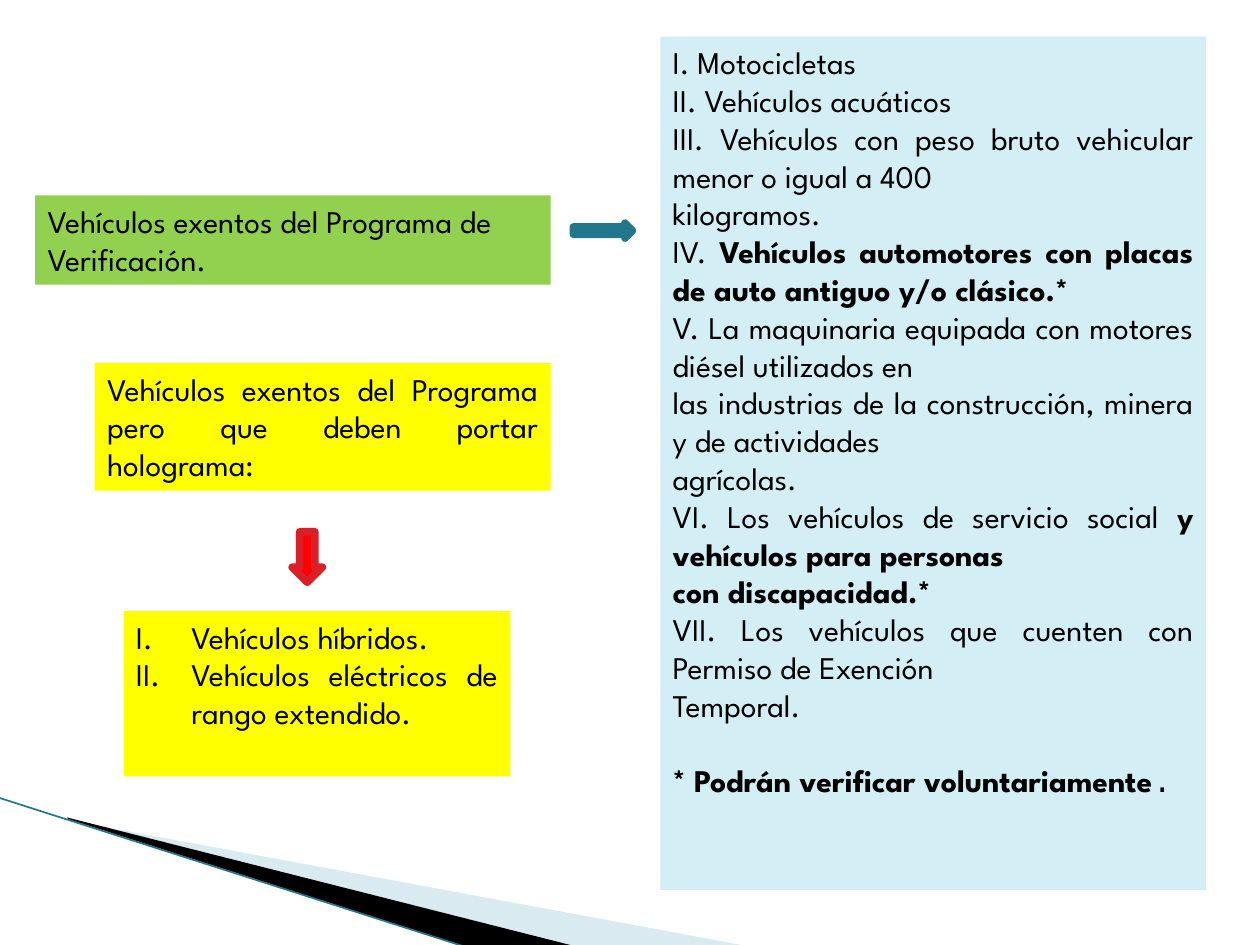
"""Build the slide on vehicles exempt from the verification programme."""
import dataclasses
import typing

import lxml.etree
import pptx
import pptx.dml.color
import pptx.enum.shapes
import pptx.enum.text
import pptx.oxml.ns
import pptx.util

Cm = pptx.util.Cm
Pt = pptx.util.Pt
Align = pptx.enum.text.PP_ALIGN
Geometry = pptx.enum.shapes.MSO_SHAPE

COLORS = {
    "text": "000000", "green": "92D050", "yellow": "FFFF00", "ice": "D3EEF5",
    "red": "FF0000", "crimson": "DA1F28", "aqua": "2DA2BF", "teal": "21788D",
    "black": "000000", "mist": "A0CBDC",
}
FONT = {"name": "League Spartan", "size": Pt(18), "bold": False}
FRAME = {
    "word_wrap": True,
    "auto_size": pptx.enum.text.MSO_AUTO_SIZE.NONE,
    "vertical_anchor": pptx.enum.text.MSO_ANCHOR.TOP,
    "margin_left": Cm(0.25), "margin_right": Cm(0.25),
    "margin_top": Cm(0.13), "margin_bottom": Cm(0.13),
}
BOLD = {"bold": True}
HANGING = Cm(1.12)


@dataclasses.dataclass
class Run:
    """A stretch of text with its font changes."""
    text: str
    font: dict = dataclasses.field(default_factory=dict)


@dataclasses.dataclass
class Panel:
    """A filled text panel, measured in centimetres."""
    box: tuple[float, float, float, float]
    fill: str
    paragraphs: list[list[Run]]
    align: typing.Any = Align.JUSTIFY
    numbered: bool = False
    last_gap: float = 0


@dataclasses.dataclass
class Arrow:
    """A block arrow, measured in centimetres."""
    geometry: typing.Any
    box: tuple[float, float, float, float]
    fill: str
    line: str


@dataclasses.dataclass
class Wedge:
    """A decorative polygon, measured in centimetres."""
    points: list[tuple[float, float]]
    fill: str
    opacity: int = 100


PROGRAM = Panel((0.71, 3.94, 10.39, 1.8), "green",
                [[Run("Vehículos exentos del Programa de Verificación.")]], Align.LEFT)
EXEMPT = Panel((13.31, 0.74, 11, 17.2), "ice", [
    [Run("I. Motocicletas")],
    [Run("II. Vehículos acuáticos")],
    [Run("III. Vehículos con peso bruto vehicular menor o igual a 400")],
    [Run("kilogramos.")],
    [Run("IV. "), Run("Vehículos automotores con placas de auto antiguo y/o clásico.*", BOLD)],
    [Run("V. La maquinaria equipada con motores diésel utilizados en")],
    [Run("las industrias de la construcción, minera y de actividades")],
    [Run("agrícolas.")],
    [Run("VI. Los vehículos de servicio social "), Run("y vehículos para personas", BOLD)],
    [Run("con discapacidad.*", BOLD)],
    [Run("VII. Los vehículos que cuenten con Permiso de Exención")],
    [Run("Temporal.")],
    [Run("* Podrán verificar voluntariamente", BOLD), Run(".", {"name": "Courier New"})],
], last_gap=21.6)
HOLOGRAM = Panel((1.91, 7.32, 9.19, 2.57), "yellow", [
    [Run("Vehículos exentos del Programa pero que deben portar holograma:")]])
HYBRIDS = Panel((2.49, 12.32, 7.8, 3.33), "yellow", [
    [Run("Vehículos híbridos.")],
    [Run("Vehículos eléctricos de rango extendido.")],
], numbered=True)
ARROWS = [
    Arrow(Geometry.DOWN_ARROW, (5.89, 10.72, 0.61, 1.02), "red", "crimson"),
    Arrow(Geometry.RIGHT_ARROW, (11.56, 4.5, 1.19, 0.3), "aqua", "teal"),
]
WEDGES = [
    Wedge([(1.4, 16.54), (15.11, 19.08), (11.58, 19.08), (1.4, 16.51)], "mist", 40),
    Wedge([(1.35, 16.48), (11.61, 19.08), (9.45, 19.1), (1.37, 16.51)], "black"),
]


def color(name: str) -> pptx.dml.color.RGBColor:
    """Look up a palette colour."""
    return pptx.dml.color.RGBColor.from_string(COLORS[name])


def apply(target: typing.Any, values: dict) -> None:
    """Set attributes from format values."""
    for name, value in values.items():
        setattr(target, name, value)


def add_element(parent: typing.Any, tag: str, **attributes: str) -> None:
    """Append a drawing element."""
    lxml.etree.SubElement(parent, pptx.oxml.ns.qn(tag), attributes)


def paint(shape: typing.Any, name: str) -> None:
    """Fill a shape with a palette colour."""
    shape.fill.solid()
    shape.fill.fore_color.rgb = color(name)


def set_bullet(paragraph: typing.Any, numbered: bool) -> None:
    """Number a paragraph in Roman numerals or remove its bullet."""
    properties = paragraph._p.get_or_add_pPr()
    indent = HANGING if numbered else 0
    properties.set("marL", str(int(indent)))
    properties.set("indent", str(-int(indent)))
    if numbered:
        add_element(properties, "a:buFont", typeface="+mj-lt")
        add_element(properties, "a:buAutoNum", type="romanUcPeriod")
    else:
        add_element(properties, "a:buNone")


def fill_panel(shape: typing.Any, panel: Panel) -> None:
    """Place, paint and write a panel."""
    apply(shape, dict(zip(("left", "top", "width", "height"), map(Cm, panel.box))))
    paint(shape, panel.fill)
    frame = shape.text_frame
    apply(frame, FRAME)
    for index, runs in enumerate(panel.paragraphs):
        paragraph = frame.add_paragraph() if index else frame.paragraphs[0]
        set_bullet(paragraph, panel.numbered)
        last = index and index == len(panel.paragraphs) - 1
        apply(paragraph, {"alignment": panel.align, "space_after": Pt(0),
                          "space_before": Pt(panel.last_gap if last else 0)})
        for item in runs:
            run = paragraph.add_run()
            run.text = item.text
            apply(run.font, FONT | item.font)
            run.font.color.rgb = color("text")


def draw_arrow(slide: typing.Any, arrow: Arrow) -> None:
    """Draw a block arrow."""
    shape = slide.shapes.add_shape(arrow.geometry, *map(Cm, arrow.box))
    shape.shadow.inherit = False
    paint(shape, arrow.fill)
    shape.line.color.rgb = color(arrow.line)
    shape.line.width = Pt(4.33)


def draw_wedge(slide: typing.Any, wedge: Wedge) -> None:
    """Draw a polygon without outline."""
    start, *others = [(Cm(x), Cm(y)) for x, y in wedge.points]
    builder = slide.shapes.build_freeform(*start)
    builder.add_line_segments(others, close=True)
    shape = builder.convert_to_shape()
    shape.shadow.inherit = False
    paint(shape, wedge.fill)
    shape.line.fill.background()
    if wedge.opacity < 100:
        fill = shape._element.spPr.find(".//" + pptx.oxml.ns.qn("a:srgbClr"))
        add_element(fill, "a:alpha", val=str(wedge.opacity * 1000))


def draw_edge(slide: typing.Any) -> None:
    """Draw the thin line along the wedges."""
    ends = map(Cm, (-0.03, 16.08, 9.42, 19.1))
    line = slide.shapes.add_connector(pptx.enum.shapes.MSO_CONNECTOR.STRAIGHT, *ends)
    line.line.color.rgb = color("teal")
    line.line.width = Pt(0.95)
    add_element(line._element.spPr, "a:effectLst")


def main() -> None:
    """Build and save the presentation."""
    presentation = pptx.Presentation()
    apply(presentation, {"slide_width": Cm(25.4), "slide_height": Cm(19.05)})
    slide = presentation.slides.add_slide(presentation.slide_layouts[3])
    title, hybrids, exempt = slide.placeholders
    for wedge in WEDGES:
        draw_wedge(slide, wedge)
    draw_edge(slide)
    hologram = slide.shapes.add_textbox(*map(Cm, HOLOGRAM.box))
    for shape, panel in ((title, PROGRAM), (exempt, EXEMPT),
                         (hologram, HOLOGRAM), (hybrids, HYBRIDS)):
        fill_panel(shape, panel)
    for arrow in ARROWS:
        draw_arrow(slide, arrow)
    presentation.save("out.pptx")


if __name__ == "__main__":
    main()
